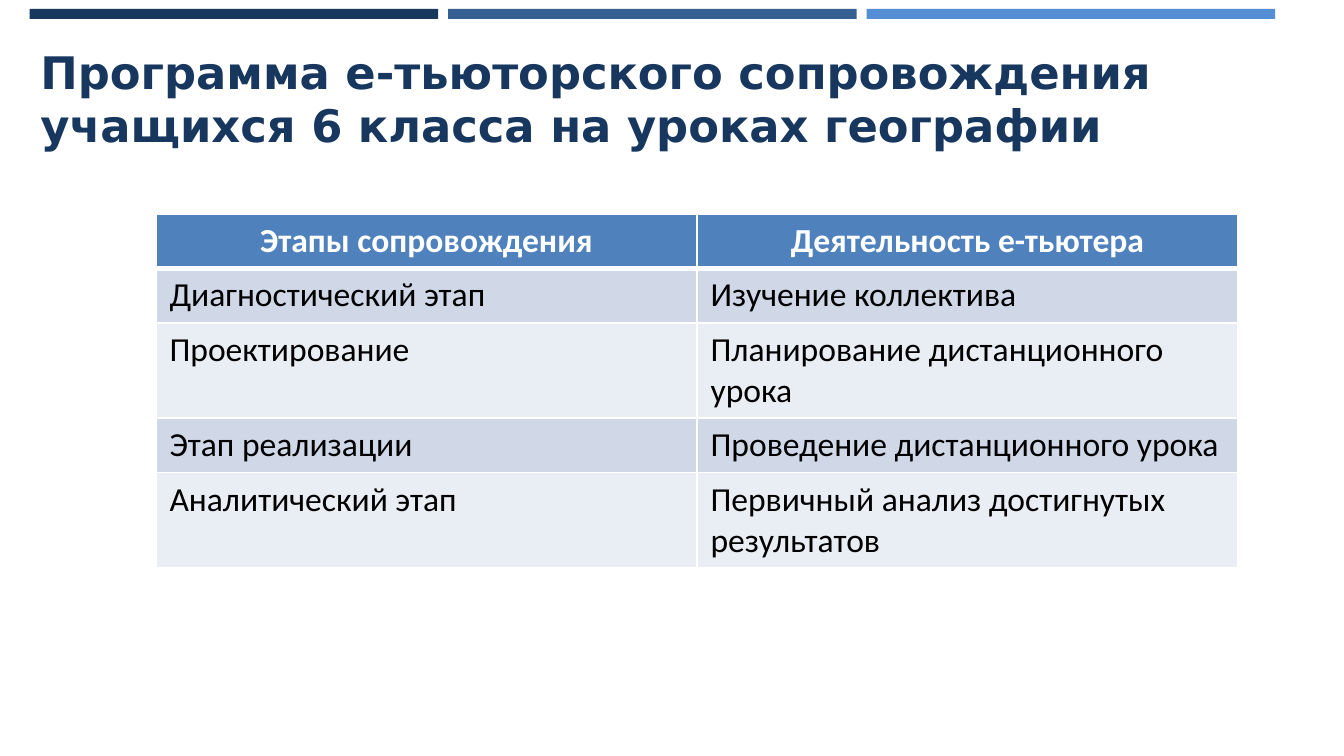
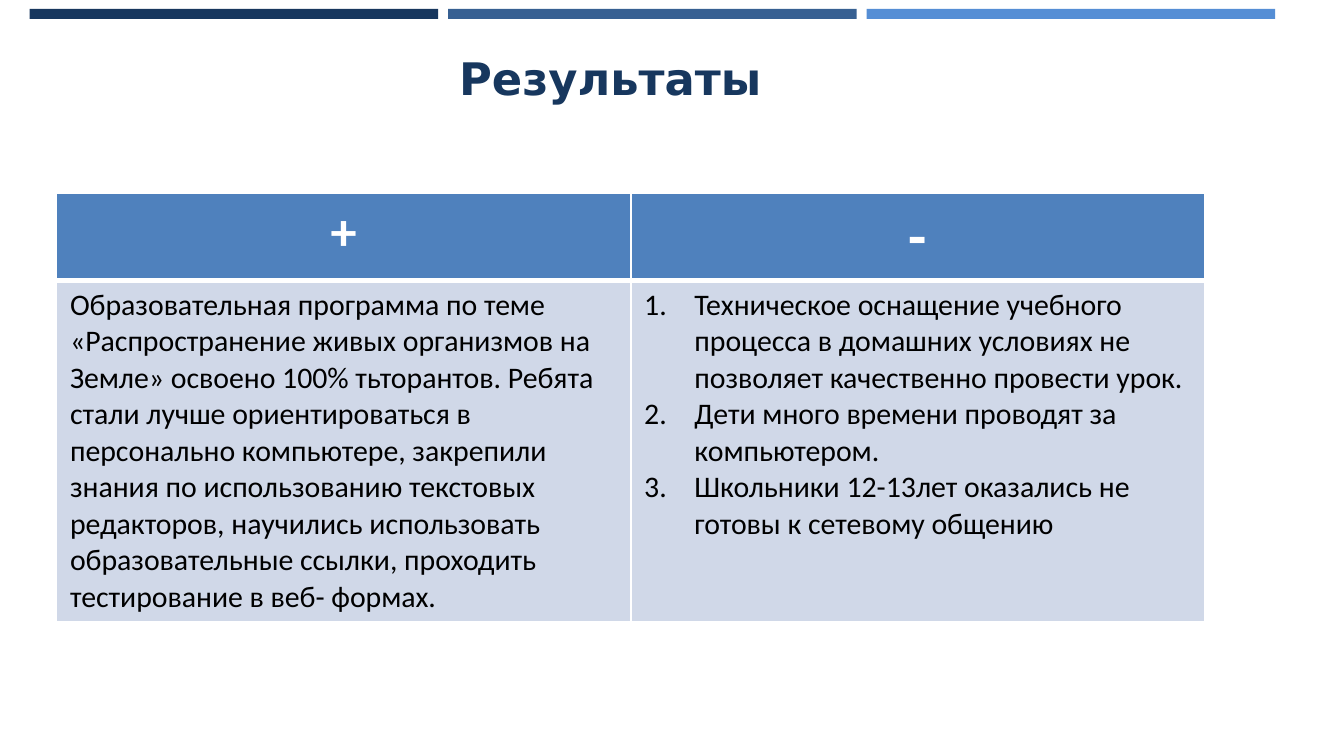
from lxml import etree
from pptx import Presentation
from pptx.dml.color import RGBColor
from pptx.enum import shapes, text
from pptx.oxml import ns
from pptx.util import Cm, Pt

COLORS = {
    "navy": "17375E",
    "steel": "376092",
    "sky": "558ED5",
    "header": "4F81BD",
    "band": "D0D8E8",
    "light": "E9EDF4",
    "white": "FFFFFF",
    "black": "000000",
}
TITLE_FONT = {"name": "DejaVu Sans", "size": Pt(24), "bold": True}
HEADER_FONT = {"name": "Calibri", "bold": True}
BODY_FONT = {"name": "Calibri", "bold": False}

STAGES = [
    ["Этапы сопровождения", "Деятельность е-тьютера"],
    ["Диагностический этап", "Изучение коллектива"],
    ["Проектирование", "Планирование дистанционного урока"],
    ["Этап реализации", "Проведение дистанционного урока"],
    ["Аналитический этап", "Первичный анализ достигнутых результатов"],
]
RESULTS = [
    ["+", "-"],
    [
        "Образовательная программа по теме «Распространение живых организмов "
        "на Земле» освоено 100% тьторантов. Ребята стали лучше ориентироваться "
        "в персонально компьютере, закрепили знания по использованию текстовых "
        "редакторов, научились использовать образовательные ссылки, проходить "
        "тестирование в веб- формах.",
        [
            "Техническое оснащение учебного процесса в домашних условиях "
            "не позволяет качественно провести урок.",
            "Дети много времени проводят за компьютером.",
            "Школьники 12-13лет оказались не готовы к сетевому общению",
        ],
    ],
]


def rgb(name):
    return RGBColor.from_string(COLORS[name])


def format_font(font, values, color):
    for name, value in values.items():
        setattr(font, name, value)
    font.color.rgb = rgb(color)


def add_bands(slide, left, top, width, height, step):
    for index, color in enumerate(("navy", "steel", "sky")):
        band = slide.shapes.add_shape(
            shapes.MSO_SHAPE.RECTANGLE, left + index * step, top, width, height
        )
        band.shadow.inherit = False
        band.fill.solid()
        band.fill.fore_color.rgb = rgb(color)
        band.line.fill.background()


def place_title(slide, wording, box, alignment):
    title = slide.shapes.title
    title.left, title.top, title.width, title.height = box
    frame = title.text_frame
    frame.text = wording
    settings = {
        "word_wrap": True,
        "auto_size": text.MSO_AUTO_SIZE.NONE,
        "vertical_anchor": text.MSO_ANCHOR.TOP,
    }
    for name, value in settings.items():
        setattr(frame, name, value)
    paragraph = frame.paragraphs[0]
    paragraph.alignment = alignment
    format_font(paragraph.runs[0].font, TITLE_FONT, "navy")


def set_borders(cell, top, bottom):
    properties = cell._tc.get_or_add_tcPr()
    for side, width in (("L", 1), ("R", 1), ("T", top), ("B", bottom)):
        line = etree.SubElement(properties, ns.qn(f"a:ln{side}"), w=str(Pt(width)))
        fill = etree.SubElement(line, ns.qn("a:solidFill"))
        etree.SubElement(fill, ns.qn("a:srgbClr"), val=COLORS["white"])


def number_paragraph(paragraph):
    properties = paragraph._p.get_or_add_pPr()
    properties.set("marL", str(Cm(0.95)))
    properties.set("indent", str(-Cm(0.95)))
    etree.SubElement(properties, ns.qn("a:buAutoNum"), type="arabicPeriod")


def fill_cell(cell, content, row, size):
    is_header = row == 0
    set_borders(cell, 3 if row == 1 else 1, 3 if is_header else 1)
    cell.fill.solid()
    fill = "header" if is_header else ("light", "band")[row % 2]
    cell.fill.fore_color.rgb = rgb(fill)
    numbered = isinstance(content, list)
    cell.text = "\n".join(content) if numbered else content
    for paragraph in cell.text_frame.paragraphs:
        if numbered:
            number_paragraph(paragraph)
        if is_header:
            paragraph.alignment = text.PP_ALIGN.CENTER
        values = HEADER_FONT if is_header else BODY_FONT
        color = "white" if is_header else "black"
        format_font(paragraph.runs[0].font, {**values, "size": Pt(size)}, color)


def add_table(slide, rows, box, row_heights, header_sizes, body_size):
    graphic = slide.shapes.add_table(len(rows), len(rows[0]), *box)
    table = graphic.table
    table.first_row = table.horz_banding = False
    for row, (contents, height) in enumerate(zip(rows, row_heights)):
        table.rows[row].height = height
        sizes = header_sizes if row == 0 else [body_size] * len(contents)
        for column, (content, size) in enumerate(zip(contents, sizes)):
            fill_cell(table.cell(row, column), content, row, size)
    graphic.height = box[3]


def add_table_slide(presentation, wording, title_box, alignment, **table):
    slide = presentation.slides.add_slide(presentation.slide_layouts[5])
    add_bands(slide, Cm(0.56), Cm(0.17), Cm(7.72), Cm(0.19), Cm(7.91))
    place_title(slide, wording, title_box, alignment)
    add_table(slide, **table)


def main():
    presentation = Presentation()
    presentation.slide_width, presentation.slide_height = Cm(25.4), Cm(14.29)
    add_table_slide(
        presentation,
        "Программа е-тьюторского сопровождения учащихся 6 класса на уроках географии",
        (Cm(0.51), Cm(0.71), Cm(21.77), Cm(2.64)),
        text.PP_ALIGN.LEFT,
        rows=STAGES,
        box=(Cm(2.95), Cm(4.04), Cm(20.45), Cm(6.65)),
        row_heights=[Cm(1.03)] * len(STAGES),
        header_sizes=[18, 18],
        body_size=18,
    )
    add_table_slide(
        presentation,
        "Результаты",
        (Cm(0.51), Cm(0.84), Cm(22.05), Cm(2.03)),
        text.PP_ALIGN.CENTER,
        rows=RESULTS,
        box=(Cm(1.07), Cm(3.66), Cm(21.7), Cm(7.98)),
        row_heights=[Cm(0.81), Cm(6.35)],
        header_sizes=[28, 32],
        body_size=16,
    )
    presentation.save("out.pptx")


if __name__ == "__main__":
    main()
